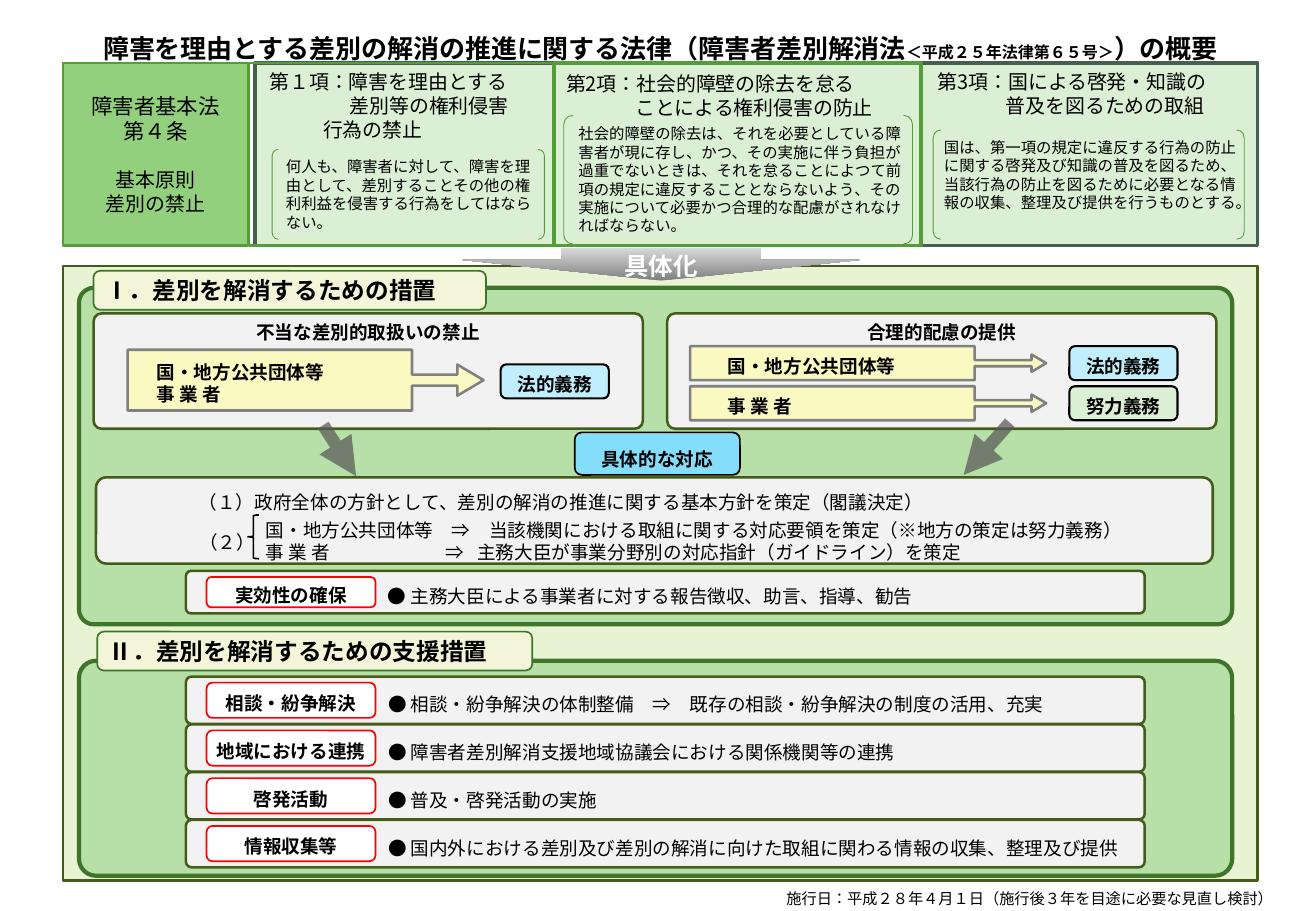
from dataclasses import dataclass

from lxml import etree
from pptx import Presentation
from pptx.dml.color import RGBColor
from pptx.enum.lang import MSO_LANGUAGE_ID
from pptx.enum.shapes import MSO_CONNECTOR, MSO_SHAPE
from pptx.enum.text import MSO_ANCHOR, MSO_AUTO_SIZE, PP_ALIGN
from pptx.oxml.ns import qn
from pptx.util import Inches, Pt

LEFT, CENTER, RIGHT = PP_ALIGN.LEFT, PP_ALIGN.CENTER, PP_ALIGN.RIGHT
TOP, MIDDLE = MSO_ANCHOR.TOP, MSO_ANCHOR.MIDDLE
RECT, ROUND = MSO_SHAPE.RECTANGLE, MSO_SHAPE.ROUNDED_RECTANGLE
BRACKETS, BRACE = MSO_SHAPE.DOUBLE_BRACKET, MSO_SHAPE.LEFT_BRACE
CALLOUT, DOWN = MSO_SHAPE.RIGHT_ARROW_CALLOUT, MSO_SHAPE.DOWN_ARROW
STRAIGHT = MSO_CONNECTOR.STRAIGHT
JAPANESE = MSO_LANGUAGE_ID.JAPANESE


@dataclass(frozen=True)
class Theme:
    font: str = "Noto Sans CJK JP"
    latin: str = "Calibri"
    black: str = "000000"
    white: str = "FFFFFF"
    ground: str = "E8F3D4"
    section: str = "B7E0A8"
    section_line: str = "3E752A"
    tab: str = "F2F5D8"
    panel: str = "F2F2F2"
    panel_line: str = "455C19"
    law: str = "93D07D"
    pale: str = "DBEFD4"
    law_line: str = "549E39"
    dark_line: str = "455F51"
    sky: str = "C1EEFC"
    blue: str = "84DDF9"
    yellow: str = "FFFF99"
    gray: str = "808080"
    light_gray: str = "D9D9D9"
    arrow: str = "595959"
    red: str = "FF0000"
    title: float = 15.4
    title_note: float = 9.5
    tab_size: float = 14
    arrow_size: float = 14.5
    law_size: float = 12.7
    clause: float = 11.8
    body: float = 11
    small: float = 9.1
    foot: float = 9


T = Theme()


def rgb(color):
    return RGBColor.from_string(color)


def set_alpha(fill_format, percent):
    clr = fill_format._xPr.find(qn("a:solidFill"))[0]
    etree.SubElement(clr, qn("a:alpha")).set("val", str(percent * 1000))


def frame(s, align, anchor, inset):
    """Prepare the text frame of a shape; inset is left, top, right, bottom."""
    tf = s.text_frame
    tf.word_wrap, tf.auto_size, tf.vertical_anchor = True, MSO_AUTO_SIZE.NONE, anchor
    tf.margin_left, tf.margin_top, tf.margin_right, tf.margin_bottom = map(Inches, inset)
    tf.paragraphs[0].alignment = align
    return tf


def add_run(p, text, size, bold=False, color=T.black, latin=T.font):
    r = p.add_run()
    r.text = text
    r.font.size, r.font.bold, r.font.name = Pt(size), bold, latin
    r.font.color.rgb = rgb(color)
    r.font.language_id = JAPANESE
    etree.SubElement(r._r.get_or_add_rPr(), qn("a:ea")).set("typeface", T.font)


def write(s, lines, size=T.body, bold=False, align=LEFT, anchor=TOP,
          inset=(0.1, 0.05, 0.1, 0.05), color=T.black, latin=T.font):
    """Write one paragraph for each line and return the paragraphs."""
    tf = frame(s, align, anchor, inset)
    for i, line in enumerate(lines):
        p = tf.add_paragraph() if i else tf.paragraphs[0]
        p.alignment, p.line_spacing = align, Pt(round(size * 1.2, 1))
        add_run(p, line, size, bold, color, latin)
    return tf.paragraphs


def add_text(slide, x, y, w, h, lines, **style):
    s = slide.shapes.add_textbox(*map(Inches, (x, y, w, h)))
    return write(s, lines, **style)


def add_box(slide, kind, x, y, w, h, fill=None, line=None, weight=1.5, adj=()):
    s = slide.shapes.add_shape(kind, *map(Inches, (x, y, w, h)))
    s.shadow.inherit = False
    for i, value in enumerate(adj):
        s.adjustments[i] = value
    if fill:
        s.fill.solid()
        s.fill.fore_color.rgb = rgb(fill)
    else:
        s.fill.background()
    if line:
        s.line.color.rgb = rgb(line)
        s.line.width = Pt(weight)
    else:
        s.line.fill.background()
    return s


def add_label(slide, x, y, w, h, text, fill, line, weight=1.25, drop=0.05):
    s = add_box(slide, ROUND, x, y, w, h, fill, line, weight)
    write(s, [text], bold=True, align=CENTER, anchor=MIDDLE, inset=(0, drop, 0, 0))


def add_callout(slide, x, y, w, h, lines, indent):
    s = add_box(slide, CALLOUT, x, y, w, h, T.yellow, T.gray, adj=(0.182, 0.256, 0.431, 0.799))
    set_alpha(s.fill, 55)
    write(s, lines, bold=True, anchor=MIDDLE, inset=(indent, 0.05, 0, 0))


def add_thick_arrow(slide, x1, y1, x2, y2):
    c = slide.shapes.add_connector(STRAIGHT, *map(Inches, (x1, y1, x2, y2)))
    c.line.color.rgb, c.line.width = rgb(T.arrow), Pt(7.5)
    set_alpha(c.line.fill, 72)
    etree.SubElement(c.line._get_or_add_ln(), qn("a:tailEnd")).set("type", "triangle")
    etree.SubElement(c._element.spPr, qn("a:effectLst"))


def add_title(slide, x, y, w, h):
    s = slide.shapes.title
    s.left, s.top, s.width, s.height = map(Inches, (x, y, w, h))
    p = frame(s, CENTER, TOP, (0.1, 0.05, 0.1, 0.05)).paragraphs[0]
    p.line_spacing = Pt(18.5)
    for text, size in (("障害を理由とする差別の解消の推進に関する法律（障害者差別解消法", T.title),
                       ("＜平成２５年法律第６５号＞", T.title_note), ("）の概要", T.title)):
        add_run(p, text, size, True)


def add_law(slide, x, y, w, h):
    """Basic law cell and its three clauses."""
    add_box(slide, RECT, x + 1.58, y, w - 1.58, h, T.pale, T.dark_line, 2)
    add_box(slide, RECT, x + 1.53, y, 2.51, h, None, T.law_line)
    add_box(slide, RECT, x + 4.04, y, 3.02, h, None, T.law_line, 2)
    s = add_box(slide, RECT, x, y, 1.52, h, T.law, T.law_line)
    ps = write(s, ["障害者基本法", "第４条", "基本原則", "差別の禁止"], T.law_size,
               align=CENTER, anchor=MIDDLE)
    ps[2].space_before = Pt(14)
    for p in ps[2:]:
        p.runs[0].font.size, p.line_spacing = Pt(T.clause), Pt(14.2)
    clauses = (
        (1.6, 0, 2.63, (("第１項：障害を理由とする", 0), ("差別等の権利侵害", 0.66), ("行為の禁止", 0.44)),
         (1.72, 0.71, 2.24, 0.74), (0.1, 0.05, 0.05, 0.05),
         "何人も、障害者に対して、障害を理由として、差別することその他の権利利益を侵害する行為をしてはならない。"),
        (4.04, 0.02, 3.1, (("第2項：社会的障壁の除去を怠る", 0), ("ことによる権利侵害の防止", 0.57)),
         (4.12, 0.43, 2.87, 1.06), (0.1, 0.05, 0.05, 0.05),
         "社会的障壁の除去は、それを必要としている障害者が現に存し、かつ、その実施に伴う負担が過重でないときは、"
         "それを怠ることによつて前項の規定に違反することとならないよう、その実施について必要かつ合理的な配慮がされなければならない。"),
        (7.1, 0, 2.73, (("第3項：国による啓発・知識の", 0), ("普及を図るための取組", 0.56)),
         (7.16, 0.55, 2.56, 0.9), (0.07, 0.05, 0.02, 0.21),
         "国は、第一項の規定に違反する行為の防止に関する啓発及び知識の普及を図るため、"
         "当該行為の防止を図るために必要となる情報の収集、整理及び提供を行うものとする。"),
    )
    for dx, dy, width, heading, (bx, by, bw, bh), inset, body in clauses:
        ps = add_text(slide, x + dx, y + dy, width, 0.7, [t for t, _ in heading], size=T.clause)
        for p, (_, indent) in zip(ps, heading):
            p._p.get_or_add_pPr().set("marL", str(Inches(indent)))
        s = add_box(slide, BRACKETS, x + bx, y + by, bw, bh, None, T.law_line, 0.5, (0.07,))
        write(s, [body], T.small, anchor=MIDDLE, inset=inset)


def add_down_arrow(slide, x, y, w, h):
    s = add_box(slide, DOWN, x, y, w, h, adj=(0.5, 0.63))
    s.fill.gradient()
    s.fill.gradient_angle = 90
    for stop, color in zip(s.fill.gradient_stops, (T.gray, T.light_gray)):
        stop.color.rgb = rgb(color)
    add_text(slide, x + w / 4, y, w / 2, 0.3, ["具体化"], size=T.arrow_size, bold=True,
             align=CENTER, inset=(0, 0.03, 0, 0), color=T.white)


def add_section(slide, x, y, w, h, adj, tab, heading):
    """Section panel; tab is the heading's left and top offset and its width."""
    add_box(slide, ROUND, x, y, w, h, T.section, T.section_line, 2.5, (adj,))
    dx, dy, tab_w = tab
    s = add_box(slide, ROUND, x + dx, y + dy, tab_w, 0.32, T.tab, T.section_line, 1)
    write(s, [heading], T.tab_size, True, anchor=MIDDLE, inset=(0.08, 0, 0, 0), latin=T.latin)


def add_panel(slide, x, y, w, h, heading):
    s = add_box(slide, ROUND, x, y, w, h, T.panel, T.panel_line, adj=(0.069,))
    write(s, [heading], bold=True, align=CENTER, inset=(0.07, 0.04, 0.07, 0.04))


def add_duties(slide, x, y, w, h):
    """Two panels of duties, each with an arrow down to the response."""
    add_panel(slide, x, y, 4.52, h, "不当な差別的取扱いの禁止")
    add_callout(slide, x + 0.28, y + 0.3, 2.93, 0.5, ["国・地方公共団体等", "事 業 者"], 0.24)
    add_label(slide, x + 3.35, y + 0.42, 0.89, 0.28, "法的義務", T.sky, T.black)
    right = x + w - 4.52
    add_panel(slide, right, y, 4.52, h, "合理的配慮の提供")
    for i, (who, duty, fill) in enumerate((("国・地方公共団体等", "法的義務", T.sky),
                                           ("事 業 者", "努力義務", T.pale))):
        top = y + 0.27 + 0.33 * i
        add_callout(slide, right + 0.19, top, 2.93, 0.28, [who], 0.31)
        add_label(slide, right + 3.31, top, 0.89, 0.28, duty, fill, T.black)
    add_thick_arrow(slide, x + 1.89, y + 0.92, x + 2.16, y + 1.34)
    add_thick_arrow(slide, x + 7.54, y + 0.9, x + 7.16, y + 1.33)


def add_response(slide, x, y, w, h):
    add_box(slide, ROUND, x, y, w, h, T.panel, T.panel_line, adj=(0.119,))
    add_label(slide, x + 3.94, y - 0.37, 1.36, 0.35, "具体的な対応", T.blue, T.black, 1, 0.09)
    add_text(slide, x - 0.26, y + 0.06, 8.18, 0.28,
             ["（１）政府全体の方針として、差別の解消の推進に関する基本方針を策定（閣議決定）"], align=CENTER)
    ps = add_text(slide, x + 1.3, y + 0.29, 8, 0.47, [
        "国・地方公共団体等　⇒　当該機関における取組に関する対応要領を策定（※地方の策定は努力義務）",
        "事 業 者\t⇒\t主務大臣が事業分野別の対応指針（ガイドライン）を策定"])
    tabs = etree.SubElement(ps[1]._p.get_or_add_pPr(), qn("a:tabLst"))
    for pos in (1.48, 1.74):
        tab = etree.SubElement(tabs, qn("a:tab"))
        tab.set("pos", str(Inches(pos)))
        tab.set("algn", "l")
    add_box(slide, BRACE, x + 1.25, y + 0.31, 0.09, 0.36, None, T.black, 1)
    add_text(slide, x + 0.74, y + 0.4, 0.68, 0.26, ["（２）"], align=CENTER, inset=(0.04,) * 4)


def add_measure(slide, x, y, w, h, label, body):
    s = add_box(slide, ROUND, x, y, w, h, T.panel, T.panel_line, adj=(0.119,))
    write(s, ["● " + body], anchor=MIDDLE, inset=(1.65, 0.07, 0, 0))
    add_label(slide, x + 0.17, y + 0.05, 1.39, h - 0.1, label, T.white, T.red, 1)


def main():
    prs = Presentation()
    prs.slide_width, prs.slide_height = Inches(10.83), Inches(7.5)
    slide = prs.slides.add_slide(prs.slide_layouts[5])
    add_box(slide, RECT, 0.52, 2.19, 9.83, 5.06, T.ground, T.panel_line)
    add_title(slide, 0.52, 0.22, 9.83, 0.36)
    add_law(slide, 0.52, 0.52, 9.83, 1.5)
    add_section(slide, 0.65, 2.37, 9.49, 2.77, 0.044, (0.12, -0.14, 3.23), "Ⅰ．差別を解消するための措置")
    add_down_arrow(slide, 3.8, 2.04, 3.28, 0.27)
    add_duties(slide, 0.77, 2.58, 9.24, 0.95)
    add_response(slide, 0.79, 3.93, 9.19, 0.71)
    add_measure(slide, 1.53, 4.7, 7.89, 0.35, "実効性の確保",
                "主務大臣による事業者に対する報告徴収、助言、指導、勧告")
    add_section(slide, 0.65, 5.44, 9.49, 1.77, 0.079, (0.15, -0.24, 3.58), "Ⅱ．差別を解消するための支援措置")
    for i, (label, body) in enumerate((
            ("相談・紛争解決", "相談・紛争解決の体制整備　⇒　既存の相談・紛争解決の制度の活用、充実"),
            ("地域における連携", "障害者差別解消支援地域協議会における関係機関等の連携"),
            ("啓発活動", "普及・啓発活動の実施"),
            ("情報収集等", "国内外における差別及び差別の解消に向けた取組に関わる情報の収集、整理及び提供"))):
        add_measure(slide, 1.53, 5.57 + 1.18 / 3 * i, 7.89, 0.39, label, body)
    add_text(slide, 5.29, 7.27, 5.28, 0.25, ["施行日：平成２８年４月１日（施行後３年を目途に必要な見直し検討）"],
             size=T.foot, align=RIGHT, latin=T.latin)
    prs.save("out.pptx")


if __name__ == "__main__":
    main()
